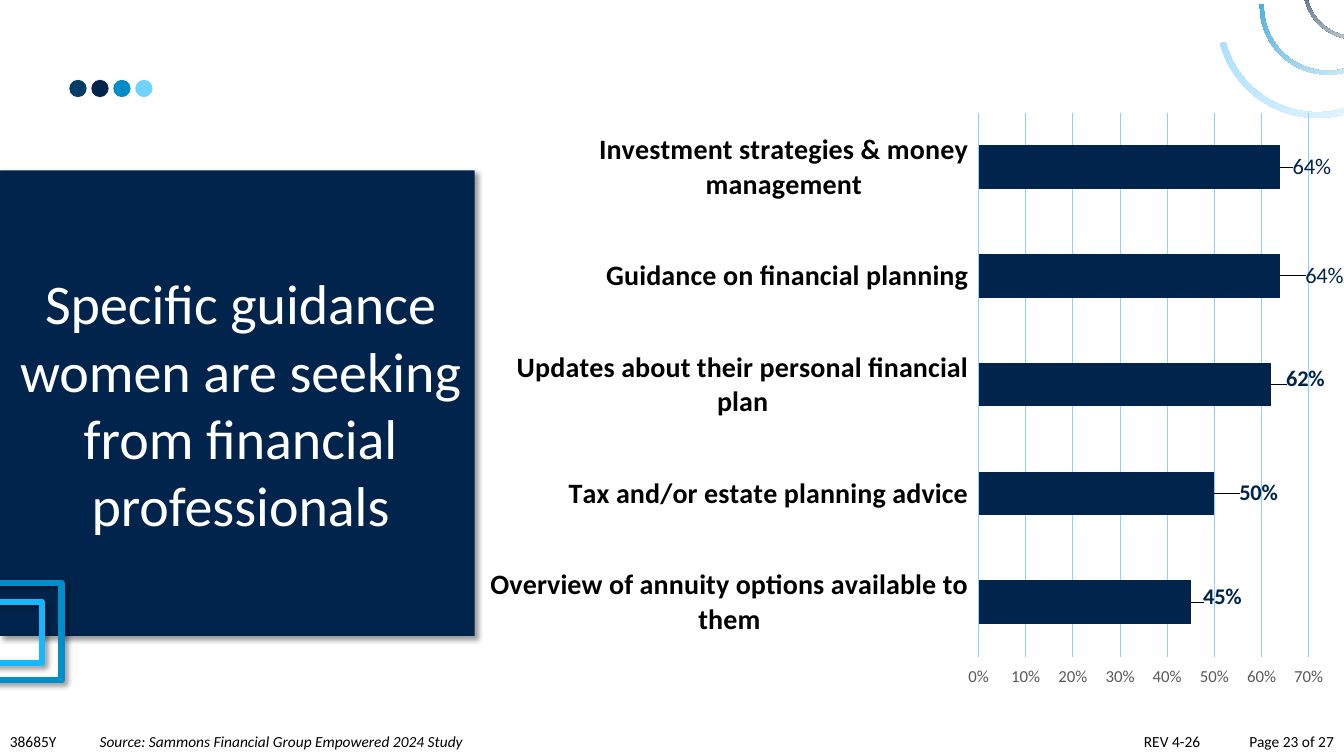
from lxml.etree import SubElement
from pptx import Presentation
from pptx.chart.data import CategoryChartData
from pptx.dml.color import RGBColor
from pptx.enum.chart import XL_CHART_TYPE, XL_LABEL_POSITION
from pptx.enum.shapes import MSO_SHAPE
from pptx.enum.text import MSO_ANCHOR, PP_ALIGN
from pptx.oxml import parse_xml
from pptx.oxml.ns import nsdecls, qn
from pptx.util import Pt

WHITE = RGBColor(0xFF, 0xFF, 0xFF)
BLACK = RGBColor(0, 0, 0)
GRAY = RGBColor(0x59, 0x59, 0x59)
NAVY = RGBColor(0x00, 0x24, 0x4B)
DARK_BLUE = RGBColor(0x00, 0x3D, 0x69)
BLUE = RGBColor(0x00, 0x8D, 0xCA)
BRIGHT_BLUE = RGBColor(0x15, 0xB7, 0xFF)
SKY = RGBColor(0x71, 0xD3, 0xFF)
PALE_BLUE = RGBColor(0x8B, 0xD2, 0xFE)

CHART_W, CHART_H = 620.6, 427
GUIDANCE = [
    ("Overview of annuity options available to them", 0.45),
    ("Tax and/or estate planning advice", 0.5),
    ("Updates about their personal financial plan", 0.62),
    ("Guidance on financial planning", 0.64),
    ("Investment strategies & money management", 0.64),
]
LABEL_SHIFTS = [(6, -4), (15, 0), (8, -4), (15, 0), (6, 0)]
CUSTOM_LABELS = {3: "64%", 4: "64%"}


def style_font(font, size, color, bold=False, italic=False):
    """Set the typeface, size, colour and weight of a font."""
    font.name = "Calibri"
    font.size = Pt(size)
    font.color.rgb = color
    font.bold = bold
    font.italic = italic


def add_plain_shape(shapes, kind, x, y, w, h):
    """Add a shape with no outline and no shadow."""
    sp = shapes.add_shape(kind, Pt(x), Pt(y), Pt(w), Pt(h))
    sp.shadow.inherit = False
    sp.line.fill.background()
    return sp


def add_drop_shadow(sp):
    """Give a shape a soft shadow towards the lower right."""
    effects = sp._element.spPr.find(qn("a:effectLst"))
    shadow = SubElement(effects, qn("a:outerShdw"), blurRad=str(Pt(4)), dist=str(Pt(3)),
                        dir="2700000", algn="tl", rotWithShape="0")
    color = SubElement(shadow, qn("a:srgbClr"), val="000000")
    SubElement(color, qn("a:alpha"), val="40000")


def add_title(s, text):
    """Add the navy title panel."""
    sp = add_plain_shape(s.shapes, MSO_SHAPE.RECTANGLE, 0, 121.7, 339.1, 332.6)
    sp.fill.solid()
    sp.fill.fore_color.rgb = NAVY
    add_drop_shadow(sp)
    tf = sp.text_frame
    tf.word_wrap = True
    tf.vertical_anchor = MSO_ANCHOR.MIDDLE
    p = tf.paragraphs[0]
    p.alignment = PP_ALIGN.CENTER
    p._p.get_or_add_pPr().set("marL", str(Pt(4.5)))
    r = p.add_run()
    r.text = text
    style_font(r.font, 40, WHITE)


def add_frame(s, x, y, w, h, color):
    """Add a hollow rectangle with a thick shadowed outline."""
    sp = add_plain_shape(s.shapes, MSO_SHAPE.RECTANGLE, x, y, w, h)
    sp.fill.background()
    sp.line.color.rgb = color
    sp.line.width = Pt(4.5)
    add_drop_shadow(sp)


def add_ring(shapes, x, y, size, rotation, color):
    """Add a thin, almost closed ring that fades to white."""
    sp = add_plain_shape(shapes, MSO_SHAPE.BLOCK_ARC, x, y, size, size)
    sp.rotation = rotation
    for i, value in enumerate((212.7 * 0.6, 172.9 * 0.6, 0.028)):
        sp.adjustments[i] = value
    sp.fill.gradient()
    sp.fill.gradient_angle = 315
    for stop, stop_color in zip(sp.fill.gradient_stops, (color, WHITE)):
        stop.color.rgb = stop_color


def add_dots(s, colors):
    """Add a row of evenly spaced dots."""
    group = s.shapes.add_group_shape()
    for i, color in enumerate(colors):
        sp = add_plain_shape(group.shapes, MSO_SHAPE.OVAL, 49.5 + 15.7 * i, 57, 12.4, 12.4)
        sp.fill.solid()
        sp.fill.fore_color.rgb = color


def add_footer(s, x, w, text, align=PP_ALIGN.LEFT, italic=False):
    """Add one piece of footer text."""
    tf = s.shapes.add_textbox(Pt(x), Pt(519.2), Pt(w), Pt(20.6)).text_frame
    tf.word_wrap = True
    p = tf.paragraphs[0]
    p.alignment = align
    r = p.add_run()
    r.text = text
    style_font(r.font, 11, BLACK, italic=italic)


def make_layout(x, y, w=None, h=None):
    """Build a manual chart layout from fractions of the chart."""
    parts = [("x", x), ("y", y)]
    if w:
        parts = [("layoutTarget", "inner"), ("xMode", "edge"), ("yMode", "edge")] + parts
        parts += [("w", w), ("h", h)]
    body = "".join(f'<c:{tag} val="{value}"/>' for tag, value in parts)
    return parse_xml(f'<c:layout {nsdecls("c")}><c:manualLayout>{body}</c:manualLayout></c:layout>')


def add_value_labels(series):
    """Label each bar with its value, moved by its own shift."""
    labels = series.data_labels
    labels.show_value = True
    labels.number_format = "0%"
    labels.number_format_is_linked = False
    style_font(labels.font, 16, NAVY, bold=True)
    for i, (dx, dy) in enumerate(LABEL_SHIFTS):
        label = series.points[i].data_label
        if i in CUSTOM_LABELS:
            r = label.text_frame.paragraphs[0].add_run()
            r.text = CUSTOM_LABELS[i]
            style_font(r.font, 16, NAVY)
        else:
            style_font(label.font, 16, NAVY, bold=True)
        label.position = XL_LABEL_POSITION.OUTSIDE_END
    for dLbl, (dx, dy) in zip(series._element.iter(qn("c:dLbl")), LABEL_SHIFTS):
        dLbl.insert(1, make_layout(dx / CHART_W, dy / CHART_H))


def add_guidance_chart(s):
    """Add the bar chart of the guidance that women seek."""
    data = CategoryChartData(number_format="0%")
    data.categories = [name for name, value in GUIDANCE]
    data.add_series("Series 1", [value for name, value in GUIDANCE])
    chart = s.shapes.add_chart(XL_CHART_TYPE.BAR_CLUSTERED, Pt(339.1), Pt(72),
                               Pt(CHART_W), Pt(CHART_H), data).chart
    chart.has_legend = False
    chart.has_title = False
    style_font(chart.font, 10, BLACK)

    plot_area = chart._chartSpace.chart.plotArea
    for layout in plot_area.findall(qn("c:layout")):
        plot_area.remove(layout)
    plot_area.insert(0, make_layout(0.58, 0.02, 0.38, 0.91))

    style_font(chart.category_axis.tick_labels.font, 20, BLACK, bold=True)
    chart.category_axis.format.line.fill.background()
    axis = chart.value_axis
    axis.minimum_scale, axis.maximum_scale, axis.major_unit = 0, 0.7, 0.1
    axis.tick_labels.number_format = "0%"
    axis.tick_labels.number_format_is_linked = False
    style_font(axis.tick_labels.font, 12, GRAY)
    axis.format.line.fill.background()
    axis.major_gridlines.format.line.color.rgb = PALE_BLUE
    axis.major_gridlines.format.line.width = Pt(0.75)

    plot = chart.plots[0]
    plot.gap_width = 150
    plot.vary_by_categories = False
    series = plot.series[0]
    series.format.fill.solid()
    series.format.fill.fore_color.rgb = NAVY
    add_value_labels(series)


def main():
    """Build the slide and save it."""
    prs = Presentation()
    prs.slide_width, prs.slide_height = Pt(960), Pt(540)
    s = prs.slides.add_slide(prs.slide_layouts[6])
    add_footer(s, 810, 150, "REV 4-26")
    add_footer(s, 0, 136, "38685Y")
    add_title(s, "Specific guidance women are seeking from financial professionals")
    add_frame(s, -88.6, 416.2, 132.5, 69.8, BLUE)
    add_frame(s, -72, 429.8, 102.2, 43.9, BRIGHT_BLUE)
    rings = s.shapes.add_group_shape().shapes
    add_ring(rings, 869, -59.8, 144, 351.9, PALE_BLUE)
    add_ring(rings, 931, -45.4, 73.4, 13.5, NAVY)
    add_ring(rings, 900, -43.9, 97.2, 9.2, BLUE)
    add_guidance_chart(s)
    add_footer(s, 64, 491, "Source: Sammons Financial Group Empowered 2024 Study", italic=True)
    add_footer(s, 883.4, 76.6, "Page 23 of 27", PP_ALIGN.RIGHT)
    add_dots(s, (DARK_BLUE, NAVY, BLUE, SKY))
    prs.save("out.pptx")


if __name__ == "__main__":
    main()
